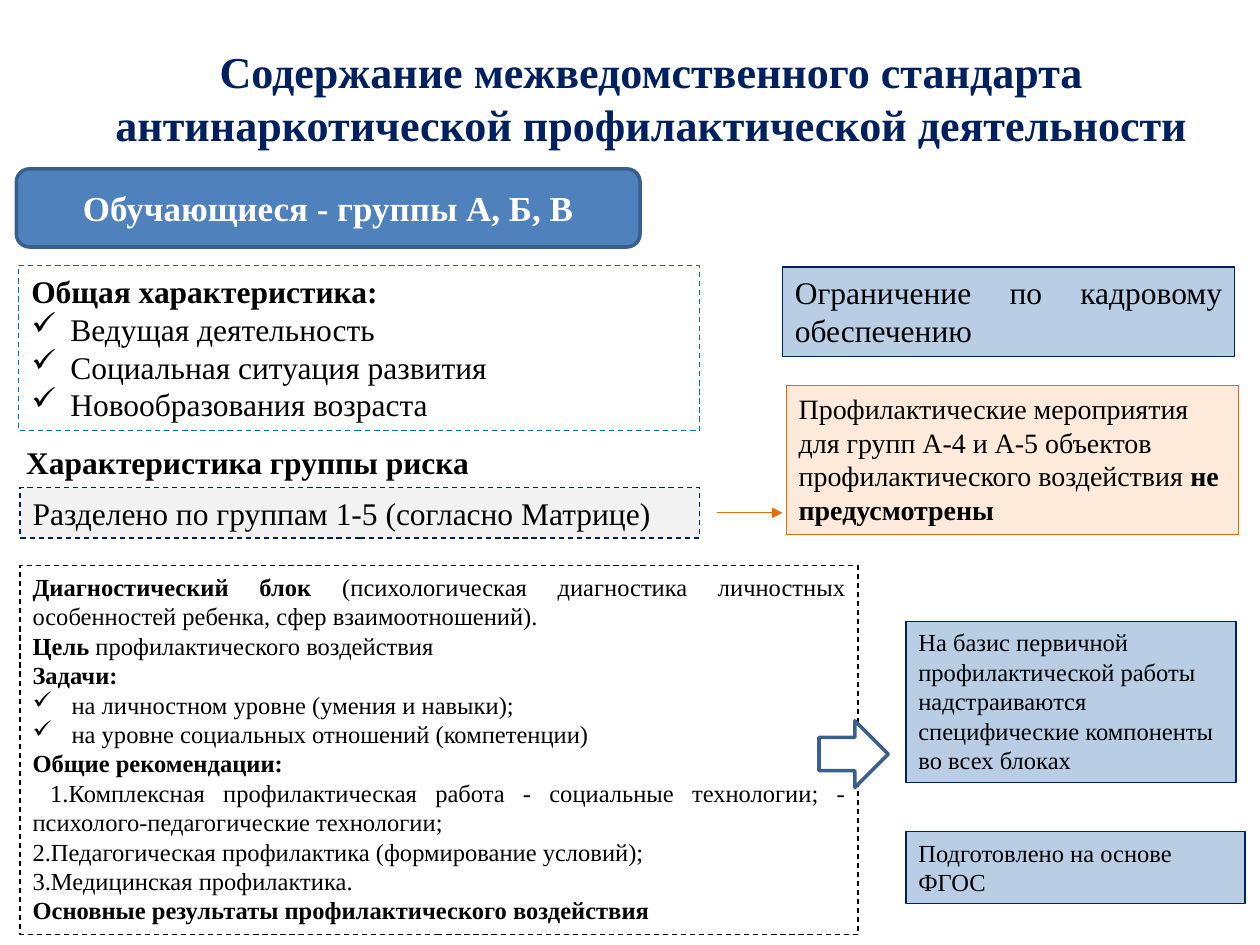
from lxml import etree
from pptx import Presentation
from pptx.dml.color import RGBColor
from pptx.enum.dml import MSO_LINE
from pptx.enum.shapes import MSO_CONNECTOR, MSO_SHAPE
from pptx.enum.text import MSO_ANCHOR, MSO_AUTO_SIZE, PP_ALIGN
from pptx.oxml.ns import qn
from pptx.util import Inches, Pt

LEFT, CENTER, JUSTIFY = PP_ALIGN.LEFT, PP_ALIGN.CENTER, PP_ALIGN.JUSTIFY
DASH = MSO_LINE.DASH
FONT = "Times New Roman"
BLACK = RGBColor(0x00, 0x00, 0x00)
WHITE = RGBColor(0xFF, 0xFF, 0xFF)
NAVY = RGBColor(0x00, 0x20, 0x60)
BLUE = RGBColor(0x4F, 0x81, 0xBD)
DARK_BLUE = RGBColor(0x3A, 0x5F, 0x8C)
BRIGHT_BLUE = RGBColor(0x00, 0x70, 0xC0)
PALE_BLUE = RGBColor(0xB9, 0xCD, 0xE5)
GRAY = RGBColor(0xF2, 0xF2, 0xF2)
ORANGE = RGBColor(0xE4, 0x6C, 0x0A)
PALE_ORANGE = RGBColor(0xFD, 0xEA, 0xDA)


def add_box(kind, at, fill, line, width=0.75, dash=None):
    s = slide.shapes.add_shape(kind, *[Inches(v) for v in at])
    s.shadow.inherit = False
    if fill is None:
        s.fill.background()
    else:
        s.fill.solid()
        s.fill.fore_color.rgb = fill
    if line is None:
        s.line.fill.background()
    else:
        s.line.color.rgb = line
        s.line.width = Pt(width)
        s.line.dash_style = dash
    return s


def write_text(s, paragraphs, size, color=BLACK, align=LEFT, anchor=MSO_ANCHOR.TOP):
    """Fill s with paragraphs, each a style ("", "check" or "indent") and (text, bold) runs."""
    tf = s.text_frame
    tf.word_wrap = True
    tf.vertical_anchor = anchor
    for i, (style, *runs) in enumerate(paragraphs):
        p = tf.paragraphs[0] if i == 0 else tf.add_paragraph()
        p.alignment = align
        pPr = p._p.get_or_add_pPr()
        if style == "check":
            pPr.set("marL", str(Inches(0.31)))
            pPr.set("indent", str(-Inches(0.31)))
            etree.SubElement(pPr, qn("a:buChar")).set("char", "✓")
        elif style == "indent":
            pPr.set("indent", str(Inches(0.14)))
        for text, bold in runs:
            r = p.add_run()
            r.text = text
            r.font.name = FONT
            r.font.size = Pt(size)
            r.font.bold = bold
            r.font.color.rgb = color


prs = Presentation()
prs.slide_width, prs.slide_height = Inches(10), Inches(7.5)
slide = prs.slides.add_slide(prs.slide_layouts[5])

title = slide.shapes.title
title.left, title.top, title.width, title.height = [Inches(v) for v in (0.67, 0.15, 9, 1.25)]
write_text(
    title,
    [("", ("Содержание межведомственного стандарта "
           "антинаркотической профилактической деятельности", True))],
    25.2, NAVY, CENTER, MSO_ANCHOR.MIDDLE)

banner = add_box(MSO_SHAPE.ROUNDED_RECTANGLE, (0.13, 1.34, 4.95, 0.62), BLUE, DARK_BLUE, 2)
write_text(banner, [("", ("Обучающиеся - группы А, Б, В", True))],
           20, WHITE, CENTER, MSO_ANCHOR.MIDDLE)

# Position, fill, line, dash, text size, alignment, paragraphs
boxes = [
    ((0.15, 2.11, 5.4, 1.31), None, BRIGHT_BLUE, DASH, 18, LEFT, [
        ("", ("Общая характеристика:", True)),
        ("check", ("Ведущая деятельность", False)),
        ("check", ("Социальная ситуация развития", False)),
        ("check", ("Новообразования возраста", False)),
    ]),
    ((0.11, 3.47, 5.4, 0.4), None, None, None, 18, LEFT, [
        ("", ("Характеристика группы риска", True)),
    ]),
    ((0.16, 3.87, 5.39, 0.4), GRAY, NAVY, DASH, 18, JUSTIFY, [
        ("", ("Разделено по группам 1-5 (согласно Матрице)", False)),
    ]),
    ((0.16, 4.49, 6.65, 2.93), None, BLACK, DASH, 14, JUSTIFY, [
        ("", ("Диагностический блок ", True),
         ("(психологическая диагностика личностных особенностей ребенка, "
          "сфер взаимоотношений).", False)),
        ("", ("Цель", True), (" профилактического воздействия", False)),
        ("", ("Задачи:", True)),
        ("check", ("на личностном уровне (умения и навыки);", False)),
        ("check", ("на уровне социальных отношений (компетенции)", False)),
        ("", ("Общие рекомендации:", True)),
        ("indent", ("1.Комплексная профилактическая работа - социальные технологии; "
                    "- психолого-педагогические технологии;", False)),
        ("", ("2.Педагогическая профилактика (формирование условий);", False)),
        ("", ("3.Медицинская профилактика.", False)),
        ("", ("Основные результаты профилактического воздействия", True)),
    ]),
    ((6.21, 2.12, 3.59, 0.71), PALE_BLUE, NAVY, None, 18, JUSTIFY, [
        ("", ("Ограничение по кадровому обеспечению", False)),
    ]),
    ((6.24, 3.06, 3.59, 1.18), PALE_ORANGE, ORANGE, None, 16, LEFT, [
        ("", ("Профилактические мероприятия для групп А-4 и А-5 объектов "
              "профилактического воздействия ", False), ("не предусмотрены", True)),
    ]),
    ((7.19, 4.93, 2.62, 1.28), PALE_BLUE, NAVY, None, 14, LEFT, [
        ("", ("На базис первичной профилактической работы надстраиваются "
              "специфические компоненты во всех блоках", False)),
    ]),
    ((7.19, 6.6, 2.69, 0.57), PALE_BLUE, NAVY, None, 14, LEFT, [
        ("", ("Подготовлено на основе ФГОС", False)),
    ]),
]
for at, fill, line, dash, size, align, paragraphs in boxes:
    box = add_box(MSO_SHAPE.RECTANGLE, at, fill, line, dash=dash)
    write_text(box, paragraphs, size, align=align)
    box.text_frame.auto_size = MSO_AUTO_SIZE.SHAPE_TO_FIT_TEXT

connector = slide.shapes.add_connector(
    MSO_CONNECTOR.STRAIGHT, Inches(5.69), Inches(4.07), Inches(6.21), Inches(4.07))
connector.line.color.rgb = ORANGE
connector.line.width = Pt(0.75)
etree.SubElement(connector.line._get_or_add_ln(), qn("a:tailEnd")).set("type", "triangle")
etree.SubElement(connector._element.spPr, qn("a:effectLst"))

add_box(MSO_SHAPE.RIGHT_ARROW, (6.5, 5.72, 0.55, 0.53), WHITE, DARK_BLUE, 2)

prs.save("out.pptx")
